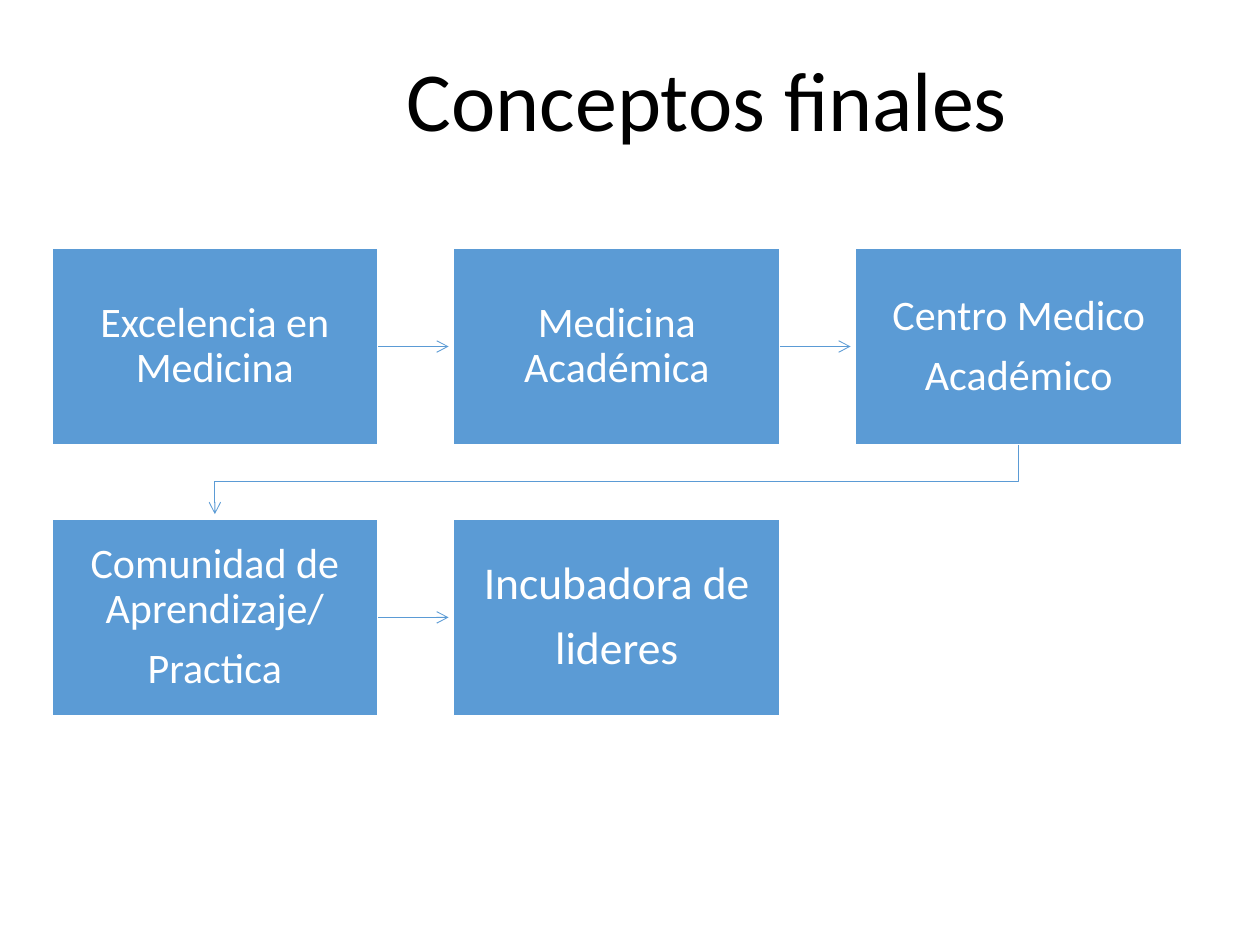
from lxml.etree import SubElement
from pptx import Presentation
from pptx.dml.color import RGBColor
from pptx.enum.shapes import MSO_CONNECTOR as CONN, MSO_SHAPE as SHAPE
from pptx.enum.text import MSO_ANCHOR as ANCHOR, PP_ALIGN as ALIGN
from pptx.oxml.ns import qn
from pptx.util import Inches, Pt

TITLE = "Conceptos finales"
# Paragraphs and text size of each step, in reading order
STEPS = [
    (["Excelencia en Medicina"], 24),
    (["Medicina Académica"], 24),
    (["Centro Medico", "Académico"], 24),
    (["Comunidad de Aprendizaje/", "Practica"], 24),
    (["Incubadora de", "lideres"], 26),
]
BLUE = RGBColor(0x5B, 0x9B, 0xD5)
WHITE = RGBColor(0xFF, 0xFF, 0xFF)
BLACK = RGBColor(0, 0, 0)

# Grid of steps, in inches
COLS = 3
LEFT, TOP = 0.41, 1.97
BOX_W, BOX_H = 2.59, 1.56
PITCH_X, PITCH_Y = 3.19, 2.15
TIP_GAP = 0.04  # space between an arrow tip and the next box

prs = Presentation()
prs.slide_width, prs.slide_height = Inches(10), Inches(7.5)
s = prs.slides.add_slide(prs.slide_layouts[6])


def write(sp, paragraphs, size, color, align, inset=None):
    tf = sp.text_frame
    tf.word_wrap = True
    tf.vertical_anchor = ANCHOR.MIDDLE
    if inset is not None:
        tf.margin_left = tf.margin_right = Inches(inset)
        tf.margin_top = tf.margin_bottom = Inches(inset)
    for i, text in enumerate(paragraphs):
        p = tf.add_paragraph() if i else tf.paragraphs[0]
        p.alignment = align
        p.line_spacing = 0.9
        if i:
            p.space_before = Pt(0.35 * size)
        r = p.add_run()
        r.text = text
        r.font.name, r.font.size = "Calibri", Pt(size)
        r.font.color.rgb = color


def style_arrow(sp):
    sp.line.color.rgb = BLUE
    sp.line.width = Pt(0.5)
    SubElement(sp.line._get_or_add_ln(), qn("a:tailEnd"), type="arrow")


# Title
title = s.shapes.add_textbox(Inches(3.13), Inches(0.2), Inches(6.49), Inches(1.25))
write(title, [TITLE], 48, BLACK, ALIGN.LEFT)

# Step boxes
boxes = []
for i, (paragraphs, size) in enumerate(STEPS):
    row, col = divmod(i, COLS)
    sp = s.shapes.add_shape(
        SHAPE.RECTANGLE, Inches(LEFT + col * PITCH_X), Inches(TOP + row * PITCH_Y),
        Inches(BOX_W), Inches(BOX_H))
    sp.shadow.inherit = False
    sp.fill.solid()
    sp.fill.fore_color.rgb = BLUE
    sp.line.color.rgb = WHITE
    sp.line.width = Pt(1)
    write(sp, paragraphs, size, WHITE, ALIGN.CENTER, inset=0.19)
    boxes.append(sp)

# Arrows from each step to the next
for a, b in zip(boxes, boxes[1:]):
    if a.top == b.top:
        y = a.top + a.height // 2
        arrow = s.shapes.add_connector(
            CONN.STRAIGHT, a.left + a.width, y, b.left - Inches(TIP_GAP), y)
        arrow.begin_connect(a, 3)
        SubElement(arrow._element.spPr, qn("a:effectLst"))
    else:  # wrap to the start of the next row
        x1, x2 = a.left + a.width // 2, b.left + b.width // 2
        bottom = a.top + a.height
        mid = (bottom + b.top) // 2
        path = s.shapes.build_freeform(x1, bottom)
        path.add_line_segments(
            [(x1, mid), (x2, mid), (x2, b.top - Inches(TIP_GAP))], close=False)
        arrow = path.convert_to_shape()
        arrow.fill.background()
        arrow.shadow.inherit = False
    style_arrow(arrow)

prs.save("out.pptx")
